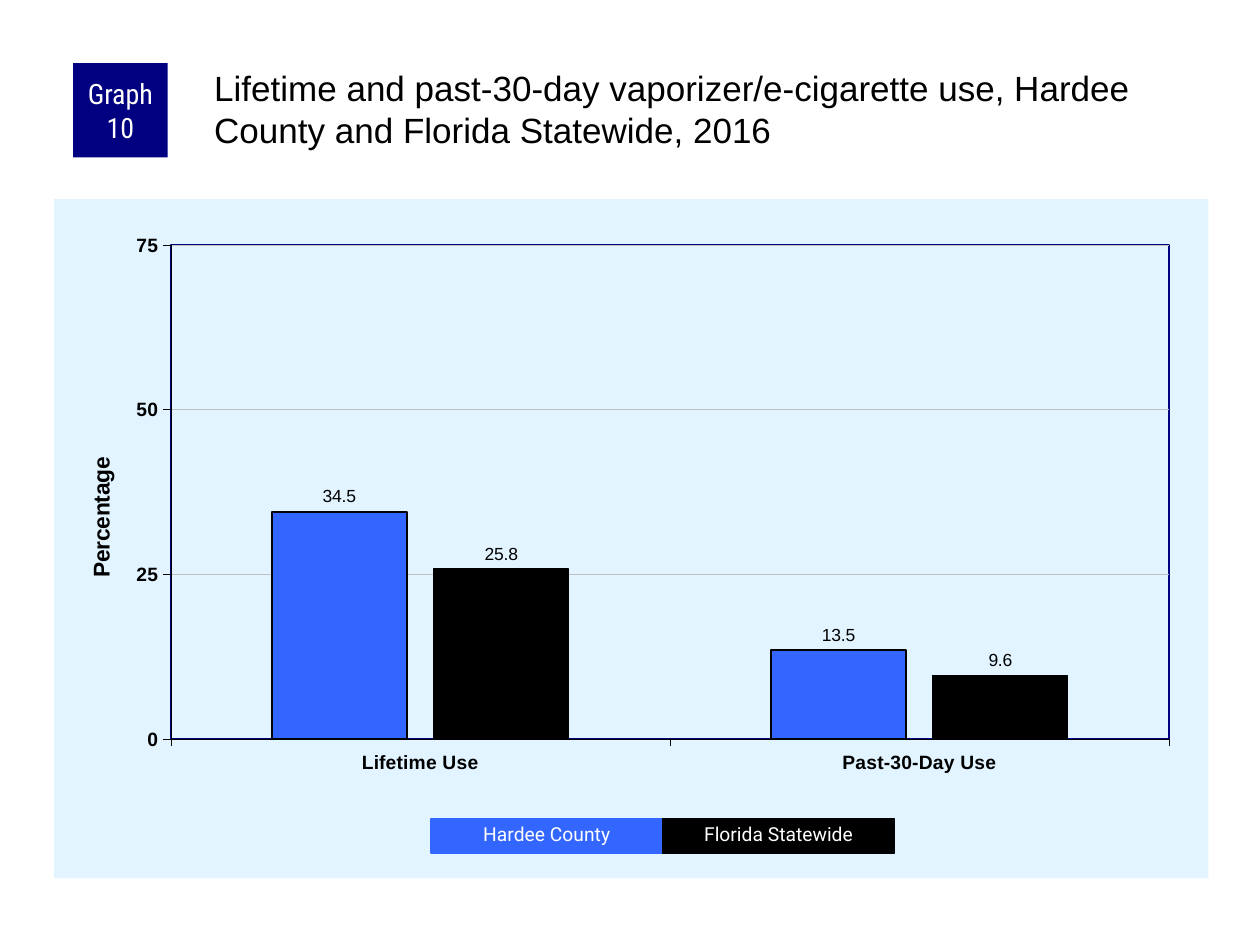
import pptx
import pptx.util
import pptx.oxml
import pptx.chart.data
import pptx.dml.color
import pptx.enum.chart
import pptx.enum.shapes
import pptx.enum.text
from lxml import etree

TITLE = ("Lifetime and past-30-day vaporizer/e-cigarette use, "
         "Hardee County and Florida Statewide, 2016")
BADGE = "Graph 10"
GROUPS = ["Lifetime Use", "Past-30-Day Use"]
SERIES = [
    {"name": "Hardee County", "vals": (34.5, 13.5), "color": "3366FF", "line": 1},
    {"name": "Florida Statewide", "vals": (25.8, 9.6), "color": "000000", "line": 0.75},
]
THEME = {
    "ink": "000000", "paper": "FFFFFF", "navy": "000080",
    "panel": "E1F4FF", "grid": "C0C0C0",
    "body": "Arial", "badge": "Roboto Condensed", "key": "Roboto",
    "title_pt": 20, "badge_pt": 16, "name_pt": 13,
    "axis_pt": 11, "key_pt": 11, "value_pt": 10, "chart_pt": 11.5,
    "hair": 0.25, "frame": 1,
}
CHART = (0.43, 1.58, 9.16, 5.39)
PLOT = (0.101, 0.068, 0.865, 0.727)
KEY_LEFT, KEY_TOP, KEY_WIDE, KEY_HIGH = 3.42, 6.5, 1.84, 0.27

Inches, Pt = pptx.util.Inches, pptx.util.Pt
Align, Anchor = pptx.enum.text.PP_ALIGN, pptx.enum.text.MSO_ANCHOR


def rgb(color):
    return pptx.dml.color.RGBColor.from_string(color)


def set_font(font, face, size, color, bold=False):
    font.name, font.size, font.bold = face, Pt(size), bold
    font.color.rgb = rgb(color)


def set_line(line, color, width):
    line.color.rgb = rgb(color)
    line.width = Pt(width)


def set_fill(fill, color):
    fill.solid()
    fill.fore_color.rgb = rgb(color)


def write(shape, text, face, size, color, align=Align.LEFT, anchor=Anchor.TOP,
          pad=(0.1, 0.05, 0.1, 0.05), space=None):
    frame = shape.text_frame
    frame.word_wrap = True
    frame.vertical_anchor = anchor
    (frame.margin_left, frame.margin_top,
     frame.margin_right, frame.margin_bottom) = map(Inches, pad)
    para = frame.paragraphs[0]
    para.alignment = align
    para.line_spacing = space
    run = para.add_run()
    run.text = text
    set_font(run.font, face, size, color)


def add_box(slide, place, fill, line=None):
    box = slide.shapes.add_shape(
        pptx.enum.shapes.MSO_SHAPE.RECTANGLE, *map(Inches, place))
    box.shadow.inherit = False
    set_fill(box.fill, fill)
    if line:
        set_line(box.line, line, 0.75)
    else:
        box.line.fill.background()
    return box


def make(xml):
    spaces = ('xmlns:c="http://schemas.openxmlformats.org/drawingml/2006/chart" '
              'xmlns:a="http://schemas.openxmlformats.org/drawingml/2006/main"')
    return pptx.oxml.parse_xml(xml.replace(">", f" {spaces}>", 1))


def make_layout(inner=False, **parts):
    """Manual chart layout; parts are fractions of the chart size."""
    target = '<c:layoutTarget val="inner"/>' if inner else ""
    modes = '<c:xMode val="edge"/><c:yMode val="edge"/>'
    sizes = "".join(f'<c:{key} val="{val}"/>' for key, val in parts.items())
    return make(f"<c:layout><c:manualLayout>{target}{modes}{sizes}"
                "</c:manualLayout></c:layout>")


def style_axis(axis):
    axis.major_tick_mark = pptx.enum.chart.XL_TICK_MARK.OUTSIDE
    axis.minor_tick_mark = pptx.enum.chart.XL_TICK_MARK.NONE
    set_line(axis.format.line, THEME["ink"], THEME["hair"])
    set_font(axis.tick_labels.font, THEME["body"], THEME["axis_pt"],
             THEME["ink"], bold=True)


def style_values(axis):
    axis.minimum_scale, axis.maximum_scale, axis.major_unit = 0, 75, 25
    axis.tick_labels.number_format = "0"
    axis.tick_labels.number_format_is_linked = False
    axis.has_major_gridlines = True
    set_line(axis.major_gridlines.format.line, THEME["grid"], THEME["hair"])
    frame = axis.axis_title.text_frame
    frame.text = "Percentage"
    set_font(frame.paragraphs[0].runs[0].font, THEME["body"], THEME["name_pt"],
             THEME["ink"], bold=True)
    title = frame._txBody.getparent().getparent()
    for old in title.findall("{*}layout"):
        title.remove(old)
    title.find("{*}tx").addnext(make_layout(x=0.025, y=0.374))


def style_areas(chart):
    """Place the plot, frame it in navy and tint the chart panel."""
    space = chart._chartSpace
    plot = space.find(".//{*}plotArea")
    for old in plot.findall("{*}layout"):
        plot.remove(old)
    plot.insert(0, make_layout(inner=True, **dict(zip("xywh", PLOT))))
    plot.append(make(
        f'<c:spPr><a:noFill/><a:ln w="{Pt(THEME["frame"])}"><a:solidFill>'
        f'<a:srgbClr val="{THEME["navy"]}"/></a:solidFill></a:ln></c:spPr>'))
    space.find("{*}chart").addnext(make(
        f'<c:spPr><a:solidFill><a:srgbClr val="{THEME["panel"]}"/></a:solidFill>'
        "<a:ln><a:noFill/></a:ln></c:spPr>"))


def add_bars(slide):
    data = pptx.chart.data.CategoryChartData(number_format="0.0")
    data.categories = GROUPS
    for item in SERIES:
        data.add_series(item["name"], item["vals"])
    chart = slide.shapes.add_chart(
        pptx.enum.chart.XL_CHART_TYPE.COLUMN_CLUSTERED,
        *map(Inches, CHART), data).chart
    chart.has_legend = chart.has_title = False
    set_font(chart.font, THEME["body"], THEME["chart_pt"], THEME["ink"])
    style_axis(chart.category_axis)
    style_axis(chart.value_axis)
    style_values(chart.value_axis)
    bars = chart.plots[0]
    bars.gap_width, bars.overlap, bars.vary_by_categories = 150, -20, False
    for item, series in zip(SERIES, bars.series):
        set_fill(series.format.fill, item["color"])
        set_line(series.format.line, THEME["ink"], item["line"])
        labels = series.data_labels
        labels.show_value = True
        labels.number_format, labels.number_format_is_linked = "0.0", False
        labels.position = pptx.enum.chart.XL_LABEL_POSITION.OUTSIDE_END
        set_font(labels.font, THEME["body"], THEME["value_pt"], THEME["ink"])
    style_areas(chart)


def main():
    deck = pptx.Presentation()
    deck.slide_width, deck.slide_height = Inches(10), Inches(7.5)
    slide = deck.slides.add_slide(deck.slide_layouts[6])
    add_bars(slide)
    badge = add_box(slide, (0.58, 0.5, 0.75, 0.75), THEME["navy"])
    write(badge, BADGE, THEME["badge"], THEME["badge_pt"], THEME["paper"],
          align=Align.CENTER, anchor=Anchor.MIDDLE, pad=(0.05, 0, 0.05, 0))
    title = slide.shapes.add_textbox(*map(Inches, (1.67, 0.5, 7.92, 0.83)))
    write(title, TITLE, THEME["body"], THEME["title_pt"], THEME["ink"],
          pad=(0.03, 0.03, 0, 0))
    for spot, item in enumerate(SERIES):
        place = (KEY_LEFT + spot * KEY_WIDE, KEY_TOP, KEY_WIDE, KEY_HIGH)
        key = add_box(slide, place, item["color"], line=item["color"])
        write(key, item["name"], THEME["key"], THEME["key_pt"], THEME["paper"],
              align=Align.CENTER, space=0.9)
    deck.save("out.pptx")


if __name__ == "__main__":
    main()
